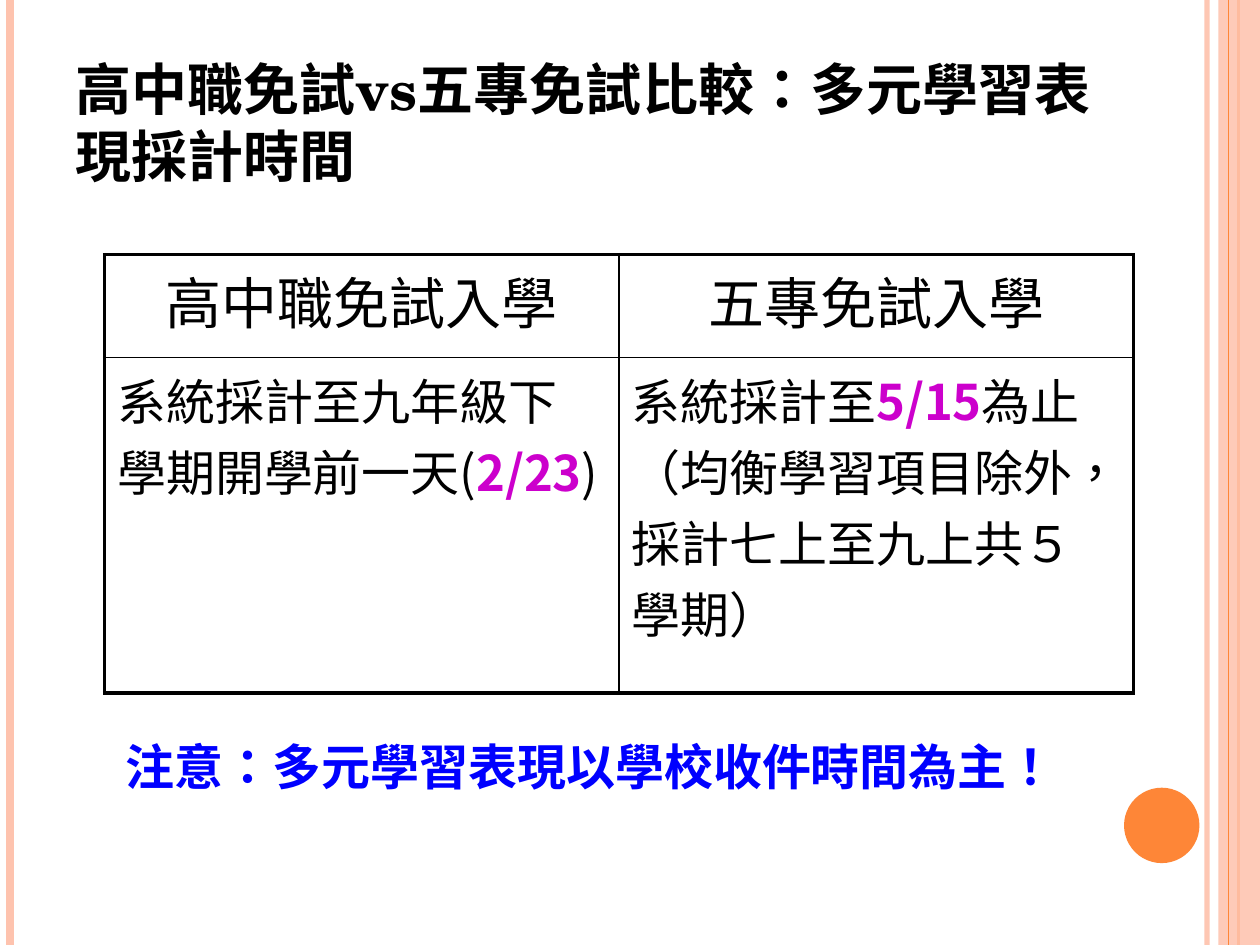
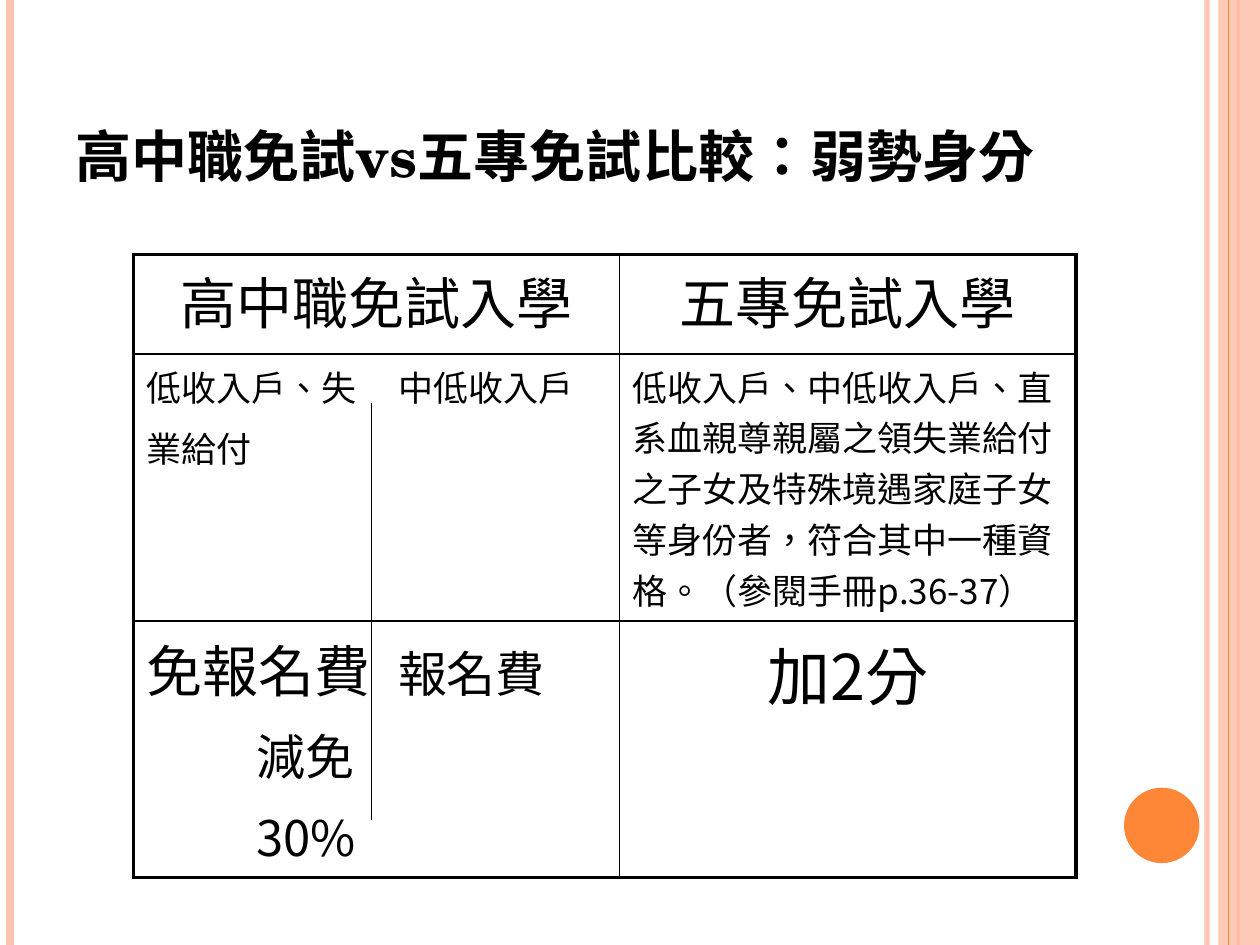
import pptx
import pptx.util
import pptx.dml.color
import pptx.enum.shapes
import pptx.enum.text
import pptx.oxml
import pptx.oxml.ns

Cm = pptx.util.Cm
Pt = pptx.util.Pt
qn = pptx.oxml.ns.qn
ALIGN = pptx.enum.text.PP_ALIGN
SHAPE = pptx.enum.shapes.MSO_SHAPE

PAGE_WIDTH, PAGE_HEIGHT = 25.4, 19.05
PEACH, ORANGE, BLACK, BLUE, MAGENTA = "FEC3AE", "FE8637", "000000", "0000FF", "CC00CC"
SERIF, SANS, NOTE_FONT = "TeX Gyre Schola", "Noto Sans CJK SC", "Arial"
OUTER, INNER = 2.25, 1
DATE = {"color": MAGENTA, "bold": True}
HEADINGS = ["高中職免試入學", "五專免試入學"]


def rgb(value):
    return pptx.dml.color.RGBColor.from_string(value)


def sub(parent, tag, **attributes):
    child = parent.makeelement(qn(tag), attributes)
    parent.append(child)
    return child


def write(paragraph, content, size=20, font=SANS, color=BLACK, bold=False,
          align=ALIGN.LEFT, before=0, indent=0, tab=None):
    paragraph.alignment = align
    paragraph.space_before = Pt(before)
    properties = paragraph._p.get_or_add_pPr()
    properties.set("marL", str(Cm(indent)))
    properties.set("indent", "0")
    if tab:
        sub(sub(properties, "a:tabLst"), "a:tab", pos=str(Cm(tab)), algn="l")
    for piece in [content] if isinstance(content, str) else content:
        words, changes = (piece, {}) if isinstance(piece, str) else piece
        look = {"size": size, "color": color, "bold": bold, **changes}
        run = paragraph.add_run()
        run.text = words
        run.font.size = Pt(look["size"])
        run.font.bold = look["bold"]
        run.font.color.rgb = rgb(look["color"])
        run.font.name = font
        run_properties = run._r.get_or_add_rPr()
        run_properties.set("lang", "zh-TW")
        sub(run_properties, "a:ea", typeface=font)


def set_alpha(fill_parent, percent):
    sub(fill_parent.find(".//" + qn("a:srgbClr")), "a:alpha", val=str(percent * 1000))


def vertical_rule(slide, x, color, weight, top=0, bottom=PAGE_HEIGHT, alpha=None):
    rule = slide.shapes.add_connector(
        pptx.enum.shapes.MSO_CONNECTOR.STRAIGHT, Cm(x), Cm(top), Cm(x), Cm(bottom))
    rule.line.color.rgb = rgb(color)
    rule.line.width = Pt(weight)
    sub(rule._element.spPr, "a:effectLst")
    if alpha:
        set_alpha(rule._element.spPr, alpha)


def plain_shape(slide, kind, box, color, alpha=None):
    shape = slide.shapes.add_shape(kind, *map(Cm, box))
    shape.shadow.inherit = False
    shape.fill.solid()
    shape.fill.fore_color.rgb = rgb(color)
    shape.line.fill.background()
    if alpha:
        set_alpha(shape._element.spPr, alpha)


def side_bands(slide):
    vertical_rule(slide, 24.33, PEACH, 3, alpha=93)
    vertical_rule(slide, 0.2, PEACH, 4.5)
    vertical_rule(slide, 24.97, ORANGE, 1.5)
    plain_shape(slide, SHAPE.RECTANGLE, (24.56, 0, PAGE_WIDTH - 24.56, PAGE_HEIGHT), PEACH, 87)
    vertical_rule(slide, 24.77, ORANGE, 0.75)
    plain_shape(slide, SHAPE.OVAL, (22.66, 15.88, 1.52, 1.52), ORANGE)


def titled_slide(deck, heading, width):
    slide = deck.slides.add_slide(deck.slide_layouts[5])
    side_bands(slide)
    title = slide.shapes.title
    title.left, title.top, title.width, title.height = map(Cm, (1.27, 0.76, width, 3.18))
    frame = title.text_frame
    frame.word_wrap = True
    frame.auto_size = pptx.enum.text.MSO_AUTO_SIZE.NONE
    frame.vertical_anchor = pptx.enum.text.MSO_ANCHOR.BOTTOM
    write(frame.paragraphs[0], heading, size=32, font=SERIF, bold=True)
    return slide


def set_borders(cell, on_edge):
    cell.fill.background()
    properties = cell._tc.get_or_add_tcPr()
    for position, side in enumerate("LRTB"):
        weight = OUTER if on_edge[side] else INNER
        line = properties.makeelement(qn("a:ln" + side), {"w": str(Pt(weight))})
        sub(sub(line, "a:solidFill"), "a:srgbClr", val=BLACK)
        properties.insert(position, line)


def comparison_table(slide, left, top, widths, heights, body_rows):
    header = [[(name, {"size": 32, "font": SERIF, "align": ALIGN.CENTER})] for name in HEADINGS]
    rows = [header] + body_rows
    table = slide.shapes.add_table(
        len(rows), len(widths), Cm(left), Cm(top), Cm(sum(widths)), Cm(sum(heights))).table
    table.first_row = table.horz_banding = False
    for column, width in zip(table.columns, widths):
        column.width = Cm(width)
    for row, height in zip(table.rows, heights):
        row.height = Cm(height)
    for r, row in enumerate(rows):
        for c, paragraphs in enumerate(row):
            cell = table.cell(r, c)
            set_borders(cell, {"L": c == 0, "R": c == len(widths) - 1,
                               "T": r == 0, "B": r == len(rows) - 1})
            frame = cell.text_frame
            for index, (content, look) in enumerate(paragraphs):
                paragraph = frame.add_paragraph() if index else frame.paragraphs[0]
                write(paragraph, content, before=6, **look)


def reminder(slide, box, words):
    frame = slide.shapes.add_textbox(*map(Cm, box)).text_frame
    frame.word_wrap = True
    write(frame.paragraphs[0], words, size=28, font=NOTE_FONT, color=BLUE, bold=True)


def deadline_slide(deck):
    slide = titled_slide(deck, "高中職免試vs五專免試比較：多元學習表現採計時間", 21.64)
    body = {"size": 28}
    senior_high = ["系統採計至九年級下學期開學前一天(", ("2/23", DATE), ")"]
    junior_college = ["系統採計至", ("5/15", DATE),
                      "為止（均衡學習項目除外，採計七上至九上共５學期）"]
    comparison_table(slide, 2.11, 5.13, [10.37, 10.37], [2.08, 6.76],
                     [[[(senior_high, body)], [(junior_college, body)]]])
    reminder(slide, (2.29, 14.73, 20.02, 1.45), "注意：多元學習表現以學校收件時間為主！")


def disadvantaged_slide(deck):
    slide = titled_slide(deck, "高中職免試vs五專免試比較：弱勢身分", 20.75)
    second_column = {"tab": 4.75}
    discount = {"size": 28, "indent": 2.23}
    eligibility = [
        [("低收入戶、失\t中低收入戶", second_column), ("業給付", {})],
        [("低收入戶、中低收入戶、直系血親尊親屬之領失業給付之子女及特殊境遇家庭子女"
          "等身份者，符合其中一種資格。（參閱手冊p.36-37）", {})],
    ]
    benefit = [
        [([("免報名費\t", {"size": 32}), ("報名費", {"size": 28})], second_column),
         ("減免", discount), ("30%", discount)],
        [("加2分", {"size": 36, "align": ALIGN.CENTER})],
    ]
    comparison_table(slide, 2.69, 5.13, [9.8, 9.2], [2.01, 3.91, 4.7], [eligibility, benefit])
    vertical_rule(slide, 7.49, BLACK, 0.75, top=8.13, bottom=16.54)


def main():
    deck = pptx.Presentation()
    deck.slide_width, deck.slide_height = Cm(PAGE_WIDTH), Cm(PAGE_HEIGHT)
    deadline_slide(deck)
    disadvantaged_slide(deck)
    deck.save("out.pptx")


if __name__ == "__main__":
    main()
